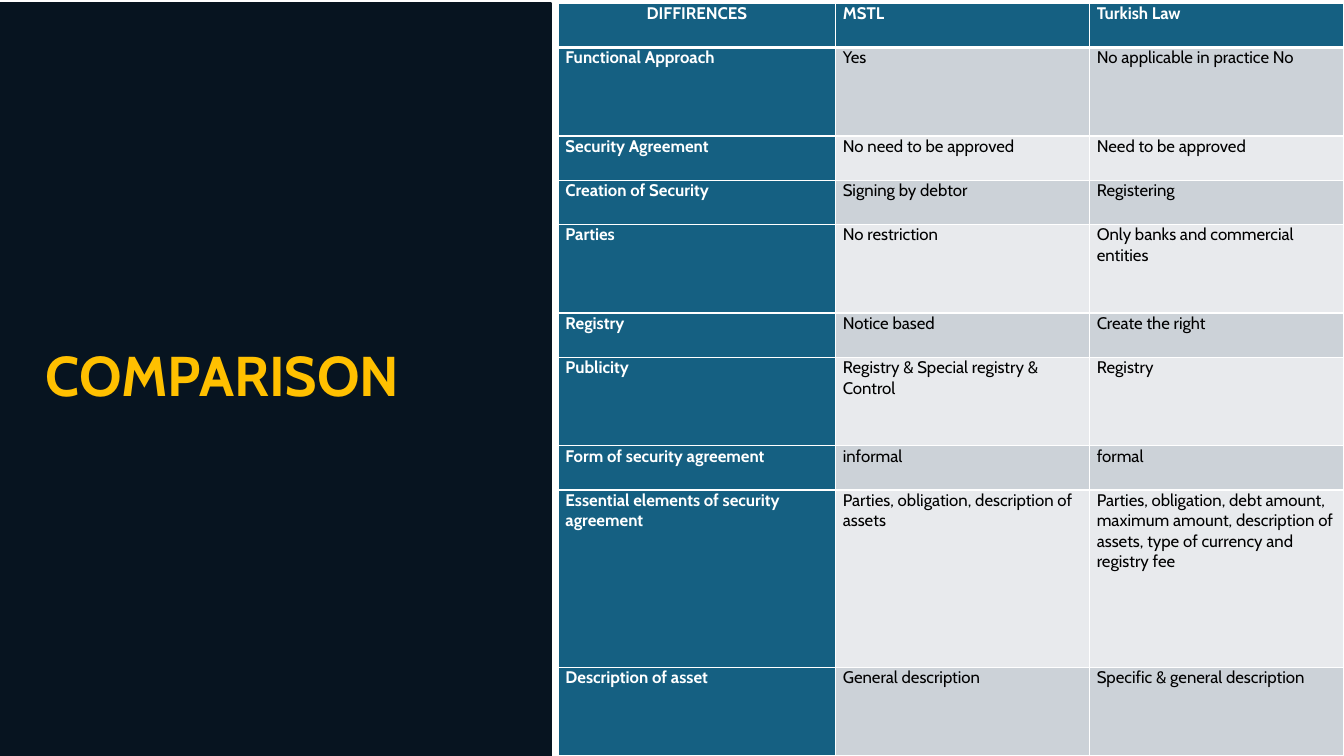
"""Build a slide comparing MSTL with Turkish law."""
from lxml import etree
from pptx import Presentation
from pptx.dml.color import RGBColor
from pptx.enum.shapes import MSO_SHAPE
from pptx.enum.text import MSO_ANCHOR, PP_ALIGN
from pptx.oxml.ns import qn
from pptx.util import Cm, Pt

TITLE = "COMPARISON"
ROWS = [
    (1, "DIFFIRENCES", "MSTL", "Turkish Law"),
    (2, "Functional Approach", "Yes", "No applicable in practice No"),
    (1, "Security Agreement", "No need to be approved", "Need to be approved"),
    (1, "Creation of Security", "Signing by debtor", "Registering"),
    (2, "Parties", "No restriction", "Only banks and commercial entities"),
    (1, "Registry", "Notice based", "Create the right"),
    (2, "Publicity", "Registry & Special registry & Control", "Registry"),
    (1, "Form of security agreement", "informal", "formal"),
    (4, "Essential elements of security agreement",
     "Parties, obligation, description of assets",
     "Parties, obligation, debt amount, maximum amount, description of assets, "
     "type of currency and registry fee"),
    (2, "Description of asset", "General description",
     "Specific & general description"),
]

FONT = "Cabin"
NAVY = RGBColor(0x07, 0x14, 0x20)
GOLD = RGBColor(0xFF, 0xC0, 0x00)
BLUE = RGBColor(0x15, 0x60, 0x82)
WHITE = RGBColor(0xFF, 0xFF, 0xFF)
BLACK = RGBColor(0, 0, 0)
DARK = RGBColor(0xCC, 0xD2, 0xD8)
LIGHT = RGBColor(0xE8, 0xEA, 0xED)
RECT = MSO_SHAPE.RECTANGLE
MIDDLE = MSO_ANCHOR.MIDDLE
LEFT, CENTER = PP_ALIGN.LEFT, PP_ALIGN.CENTER

WIDE, HIGH = Cm(33.87), Cm(19.05)
TOP, TALL = Cm(0.08), Cm(18.97)
COLS = [Cm(6.99), Cm(6.4), Cm(6.4)]
UNIT = TALL // sum(row[0] for row in ROWS)


def write(frame, text, size=12, color=BLACK, bold=False, align=LEFT, space=1.0):
    para = frame.paragraphs[0]
    para.alignment = align
    para.line_spacing = space
    run = para.add_run()
    run.text = text
    run.font.name = FONT
    run.font.size = Pt(size)
    run.font.bold = bold
    run.font.color.rgb = color


def edge(cell, side, width):
    props = cell._tc.get_or_add_tcPr()
    line = etree.SubElement(props, qn("a:ln" + side), w=str(Pt(width)))
    fill = etree.SubElement(line, qn("a:solidFill"))
    etree.SubElement(fill, qn("a:srgbClr"), val=str(WHITE))


def style(cell, row, col):
    edge(cell, "L", 1)
    edge(cell, "R", 1)
    edge(cell, "T", 3 if row == 1 else 1)
    edge(cell, "B", 3 if row == 0 else 1)
    cell.fill.solid()
    band = DARK if row % 2 else LIGHT
    cell.fill.fore_color.rgb = BLUE if row == 0 or col == 0 else band
    cell.margin_left = cell.margin_right = Cm(0.18)
    cell.margin_top = cell.margin_bottom = 0


def main():
    deck = Presentation()
    deck.slide_width, deck.slide_height = WIDE, HIGH
    slide = deck.slides.add_slide(deck.slide_layouts[6])

    panel = slide.shapes.add_shape(RECT, 0, TOP, Cm(13.89), TALL)
    panel.shadow.inherit = False
    panel.fill.solid()
    panel.fill.fore_color.rgb = NAVY
    panel.line.color.rgb = NAVY
    panel.line.width = Pt(1.5)

    title = slide.shapes.add_textbox(Cm(0.91), Cm(1.02), Cm(12.17), Cm(17.02))
    title.text_frame.word_wrap = True
    title.text_frame.vertical_anchor = MIDDLE
    write(title.text_frame, TITLE, size=40, color=GOLD, bold=True, space=0.9)

    table = slide.shapes.add_table(
        len(ROWS), len(COLS), Cm(14.07), TOP, sum(COLS), TALL).table
    for col, width in enumerate(COLS):
        table.columns[col].width = width
    for row, (units, *texts) in enumerate(ROWS):
        table.rows[row].height = UNIT * units
        for col, text in enumerate(texts):
            cell = table.cell(row, col)
            style(cell, row, col)
            head = row == 0 or col == 0
            write(cell.text_frame, text, color=WHITE if head else BLACK,
                  bold=head, align=CENTER if row == col == 0 else LEFT)

    deck.save("out.pptx")


if __name__ == "__main__":
    main()
